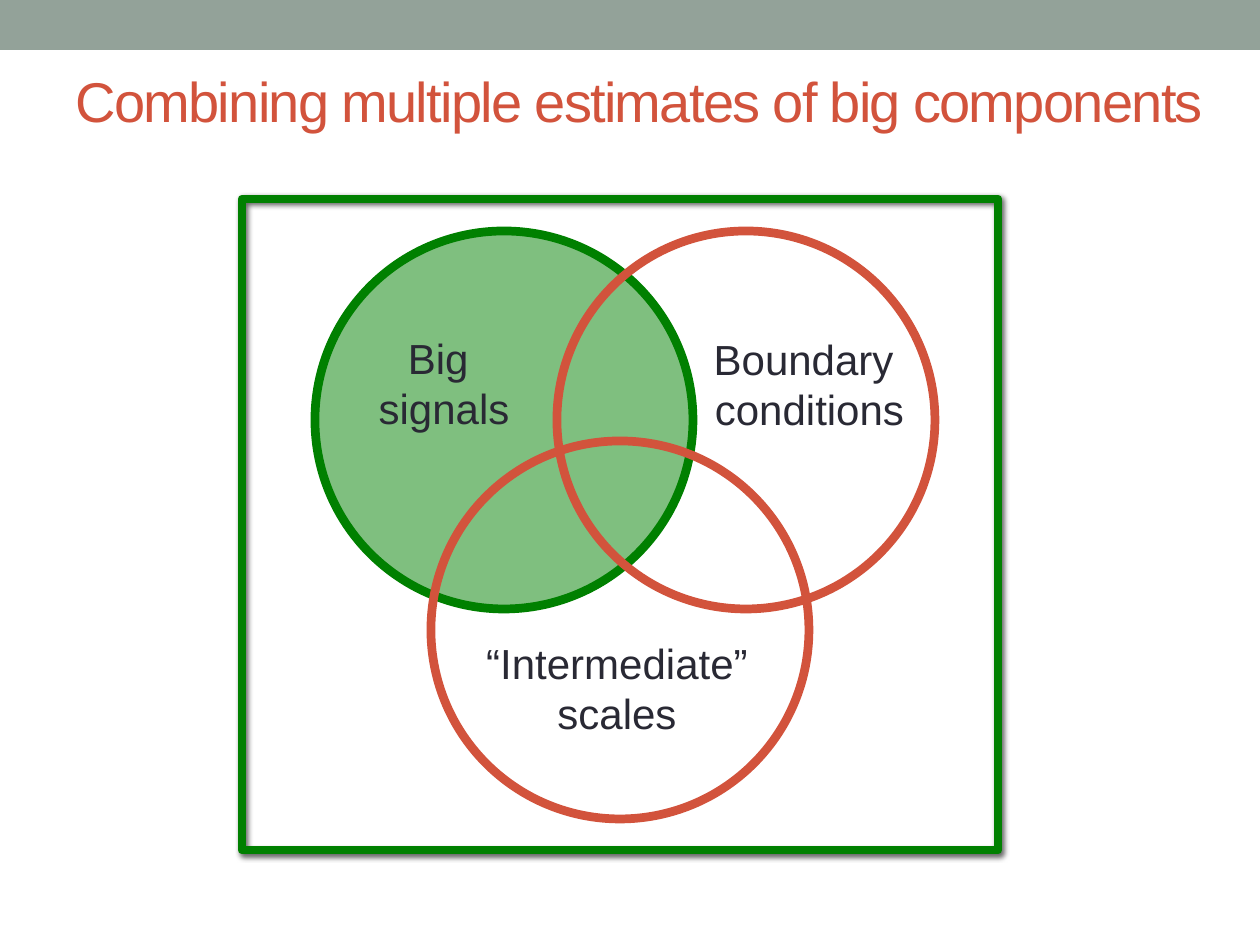
from lxml.etree import SubElement as Sub
from pptx import Presentation as Deck
from pptx.dml.color import RGBColor as RGB
from pptx.enum.shapes import MSO_SHAPE as Kind
from pptx.enum.text import MSO_ANCHOR as Anchor, PP_ALIGN as Align
from pptx.oxml.ns import qn
from pptx.util import Emu, Pt

SCALE = 914400 / 126
SAGE = RGB(0x93, 0xA2, 0x99)
RUST = RGB(0xD2, 0x53, 0x3C)
GREEN = RGB(0x00, 0x80, 0x00)
INK = RGB(0x29, 0x29, 0x34)
LABEL = {"name": "Arial", "size": Pt(24)}
TITLE = {"name": "Arial", "size": Pt(32)}


def px(*sizes):
    """Turn pixel lengths into EMU."""
    return [Emu(round(size * SCALE)) for size in sizes]


def draw(slide, kind, box, fill=None, line=None):
    """Add a preset shape with an optional fill and a thick outline."""
    shape = slide.shapes.add_shape(kind, *px(*box))
    shape.shadow.inherit = False
    if fill is None:
        shape.fill.background()
    else:
        shape.fill.solid()
        shape.fill.fore_color.rgb = fill
    if line is None:
        shape.line.fill.background()
    else:
        shape.line.color.rgb = line
        shape.line.width = Pt(5)
    return shape


def write(slide, box, lines, style, color, align, wrap):
    """Add a text box with one paragraph for each line."""
    frame = slide.shapes.add_textbox(*px(*box)).text_frame
    frame.word_wrap = wrap
    frame.vertical_anchor = Anchor.MIDDLE
    frame.text = "\n".join(lines)
    for para in frame.paragraphs:
        para.alignment = align
        font = para.runs[0].font
        for key, value in style.items():
            setattr(font, key, value)
        font.color.rgb = color
    return frame


def head(slide, box):
    """Place the top band and the title below it."""
    left, top, width, height = box
    draw(slide, Kind.RECTANGLE, (left, top, width, 50), SAGE)
    frame = write(slide, (left + 63, top + 32, width - 84, height - 32),
                  ["Combining multiple estimates of big components"],
                  TITLE, RUST, Align.LEFT, True)
    run = frame.paragraphs[0].runs[0]
    run.font._element.set("spc", "-100")


def cast(shape):
    """Give a shape a soft shadow and round corners on its outline."""
    Sub(shape.line._get_or_add_ln(), qn("a:round"))
    list_el = shape._element.spPr.find(qn("a:effectLst"))
    shade = Sub(list_el, qn("a:outerShdw"), blurRad=str(Pt(3)),
                dist=str(Pt(2)), dir="2700000", rotWithShape="0")
    tint = Sub(shade, qn("a:srgbClr"), val="000000")
    Sub(tint, qn("a:alpha"), val="60000")


def venn(slide, box):
    """Place three circles, their labels and the frame around them."""
    left, top = box[:2]
    side = 378
    rings = [(73, 32, GREEN, GREEN), (315, 32, None, RUST),
             (189, 242, None, RUST)]
    for x, y, fill, line in rings:
        ring = draw(slide, Kind.OVAL, (left + x, top + y, side, side),
                    fill, line)
        if fill is not None:
            tint = ring._element.spPr.find(qn("a:solidFill"))[0]
            Sub(tint, qn("a:alpha"), val="50000")
    labels = [(123, 126, 158, ["Big ", "signals"]),
              (230, 431, 290, ["“Intermediate”", "scales"]),
              (459, 127, 217, ["Boundary ", "conditions"])]
    for x, y, width, lines in labels:
        write(slide, (left + x, top + y, width, 115), lines,
              LABEL, INK, Align.CENTER, False)
    cast(draw(slide, Kind.RECTANGLE, box, line=GREEN))


def main():
    """Build the slide and save it."""
    deck = Deck()
    deck.slide_width, deck.slide_height = px(1260, 945)
    slide = deck.slides.add_slide(deck.slide_layouts[6])
    head(slide, (0, 0, 1260, 168))
    venn(slide, (242, 199, 756, 651))
    deck.save("out.pptx")


if __name__ == "__main__":
    main()
